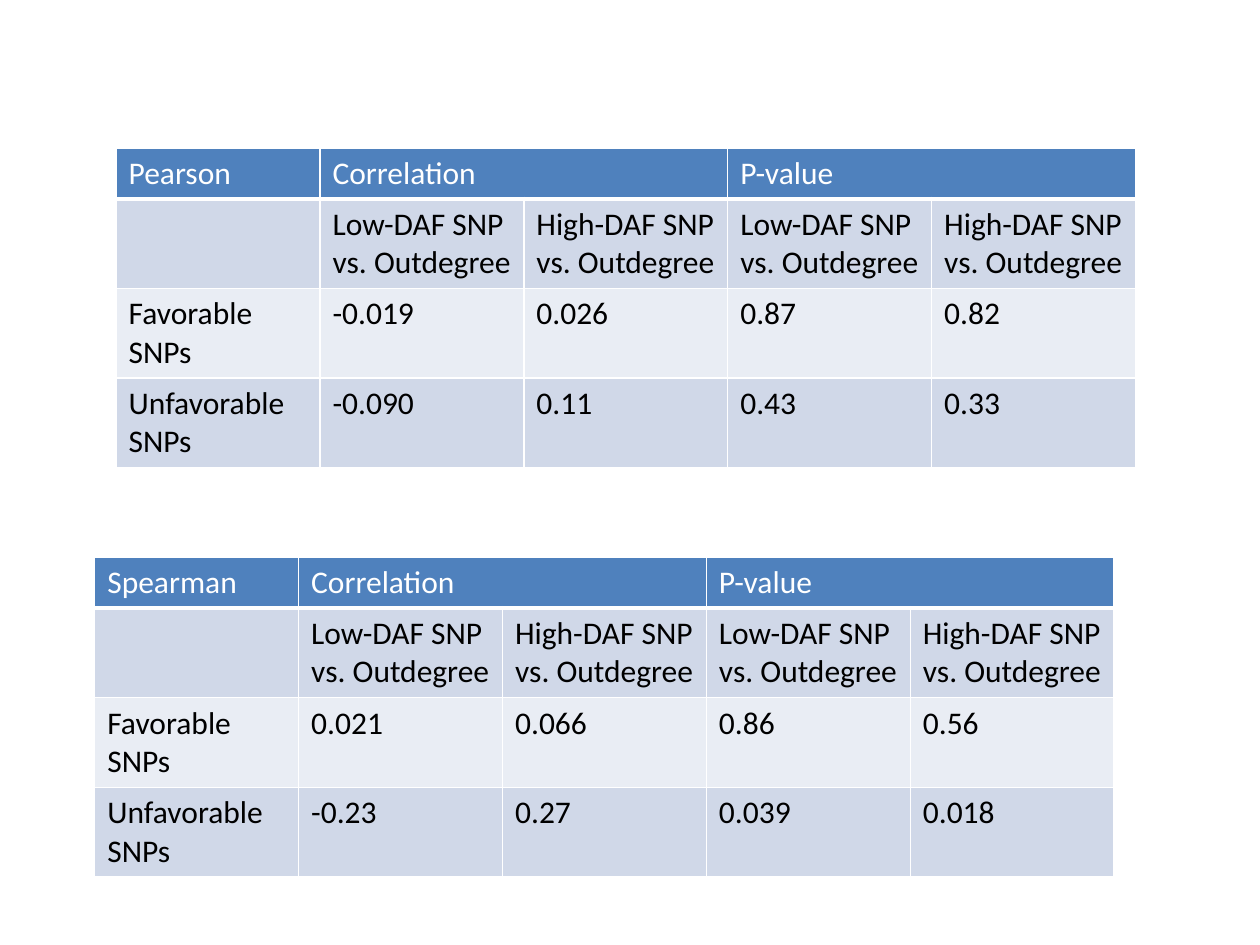
"""Build a slide with Pearson and Spearman correlation tables."""
from lxml.etree import SubElement
from pptx import Presentation
from pptx.dml.color import RGBColor
from pptx.oxml.ns import qn
from pptx.util import Cm, Pt

WHITE = RGBColor(0xFF, 0xFF, 0xFF)
BLACK = RGBColor(0x00, 0x00, 0x00)
HEADER_BLUE = RGBColor(0x4F, 0x81, 0xBD)
BAND_DARK = RGBColor(0xD0, 0xD8, 0xE8)
BAND_LIGHT = RGBColor(0xE9, 0xED, 0xF4)

COMPARISONS = ["Low-DAF SNP vs. Outdegree", "High-DAF SNP vs. Outdegree"]
TABLES = [
    {
        "method": "Pearson",
        "position": (2.34, 2.98),
        "Favorable SNPs": ["-0.019", "0.026", "0.87", "0.82"],
        "Unfavorable SNPs": ["-0.090", "0.11", "0.43", "0.33"],
    },
    {
        "method": "Spearman",
        "position": (1.91, 11.23),
        "Favorable SNPs": ["0.021", "0.066", "0.86", "0.56"],
        "Unfavorable SNPs": ["-0.23", "0.27", "0.039", "0.018"],
    },
]
ROW_FILLS = [HEADER_BLUE, BAND_DARK, BAND_LIGHT, BAND_DARK]
ROW_HEIGHTS = [1.03, 1.78, 1.78, 1.78]
COLUMN_WIDTH = 4.11
FONT = {"name": "Calibri", "size": Pt(18), "bold": False}


def add_borders(cell, bottom_width):
    """Draw white lines on all four sides of a cell."""
    properties = cell._tc.get_or_add_tcPr()
    widths = {"a:lnL": 1, "a:lnR": 1, "a:lnT": 1, "a:lnB": bottom_width}
    for tag, width in widths.items():
        line = SubElement(properties, qn(tag), w=str(Pt(width)))
        fill = SubElement(line, qn("a:solidFill"))
        SubElement(fill, qn("a:srgbClr"), val=str(WHITE))


def format_cell(cell, text, row_index):
    """Write a cell and give it the look of its row."""
    is_header = row_index == 0
    add_borders(cell, 3 if is_header else 1)
    cell.fill.solid()
    cell.fill.fore_color.rgb = ROW_FILLS[row_index]
    cell.text = text
    font = cell.text_frame.paragraphs[0].font
    for name, value in FONT.items():
        setattr(font, name, value)
    font.color.rgb = WHITE if is_header else BLACK


def add_correlation_table(slide, content):
    """Add one table of correlations and P-values."""
    rows = [
        [content["method"], "Correlation", "", "P-value", ""],
        ["", *COMPARISONS * 2],
        *([label, *content[label]] for label in ("Favorable SNPs", "Unfavorable SNPs")),
    ]
    left, top = map(Cm, content["position"])
    column_count = len(rows[0])
    table = slide.shapes.add_table(
        len(rows), column_count, left, top,
        Cm(COLUMN_WIDTH * column_count), Cm(sum(ROW_HEIGHTS)),
    ).table
    for column in table.columns:
        column.width = Cm(COLUMN_WIDTH)
    for row_index, texts in enumerate(rows):
        table.rows[row_index].height = Cm(ROW_HEIGHTS[row_index])
        for column_index, text in enumerate(texts):
            format_cell(table.cell(row_index, column_index), text, row_index)
    for first in (1, 3):
        table.cell(0, first).merge(table.cell(0, first + 1))


def main():
    """Create and save the presentation."""
    presentation = Presentation()
    presentation.slide_width, presentation.slide_height = Cm(25.4), Cm(19.05)
    slide = presentation.slides.add_slide(presentation.slide_layouts[6])
    for content in TABLES:
        add_correlation_table(slide, content)
    presentation.save("out.pptx")


if __name__ == "__main__":
    main()
